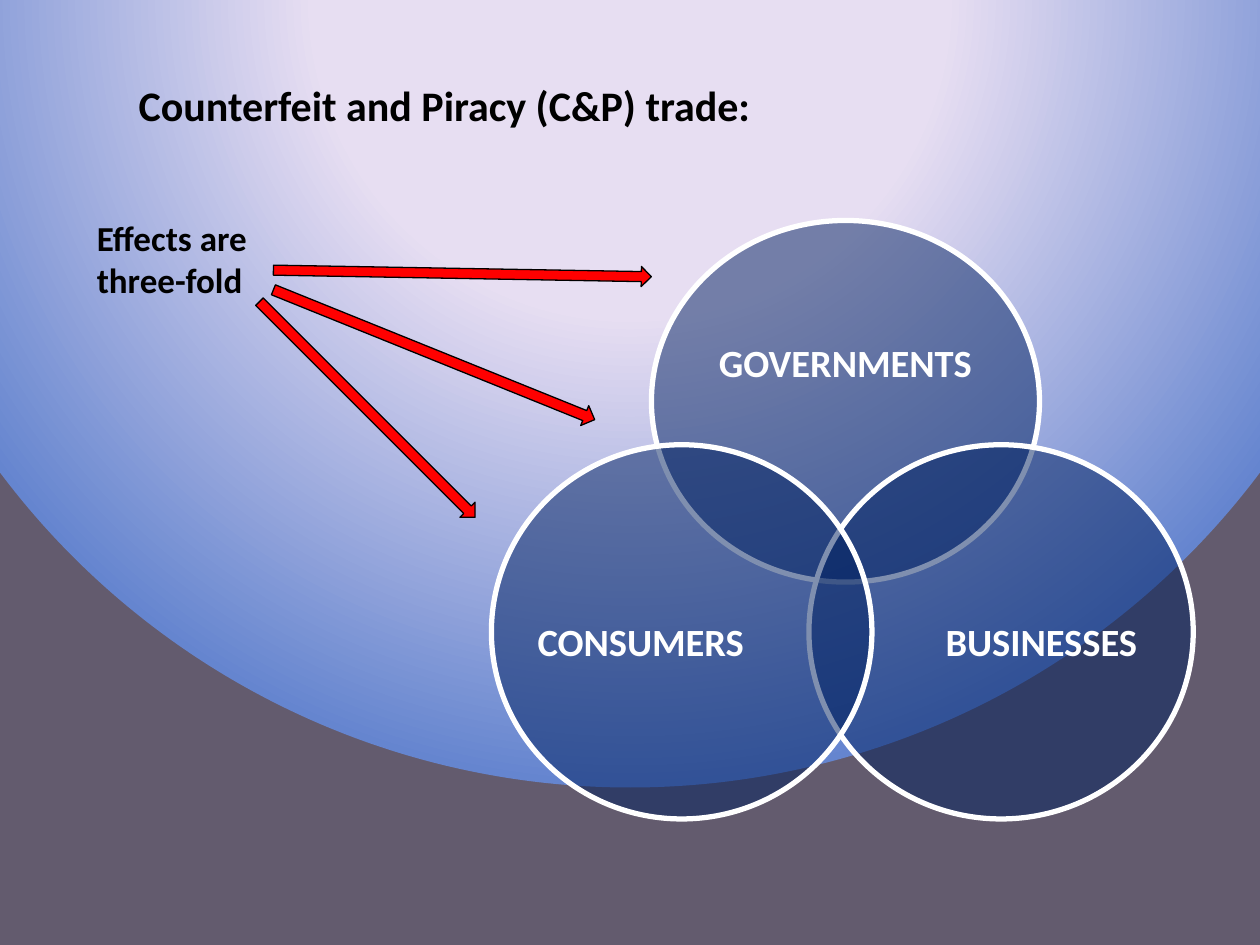
from pptx import Presentation, oxml, util as u
from pptx.dml.color import RGBColor
from pptx.enum import shapes, text
from pptx.oxml import ns

WHITE = RGBColor(0xFF, 0xFF, 0xFF)
BLACK = RGBColor(0, 0, 0)
NAVY = RGBColor(0, 0x20, 0x60)
RED = RGBColor(0xFF, 0, 0)
LILAC = RGBColor(0xE7, 0xDE, 0xF2)
BLUE = RGBColor(0x65, 0x85, 0xCF)
SLATE = RGBColor(0x63, 0x5B, 0x6E)

COLS, ROWS = 100, 75
CELL = u.Inches(0.1)
GLOW = ((40, LILAC), (100, BLUE), (100, SLATE))
RINGS = (
    ("GOVERNMENTS", (12.7, 0, 30.8, 28.7), (16.8, 5, 22.6, 12.9)),
    ("BUSINESSES", (25.2, 17.8, 30.5, 29.7), (34.5, 25.5, 18.3, 16.3)),
    ("CONSUMERS", (0, 17.8, 30.2, 29.7), (2.8, 25.5, 18.1, 16.3)),
)
ARROWS = (
    ((7.6, 0, 1.6, 30), 271),
    ((5.3, 7.7, 1.7, 27.5), 292),
    ((0, 13.7, 1.7, 24.2), 315),
)


def span(box, part=(0, 0, 0, 0)):
    """Turn a part's cells within a box into slide lengths."""
    left, top = box[0] + part[0], box[1] + part[1]
    wide, high = part[2:] if part[2] else box[2:]
    return [round(n * CELL) for n in (left, top, wide, high)]


def format(item, **values):
    """Set each named value on the item."""
    for name, value in values.items():
        setattr(item, name, value)


def write(shape, lines, size, color, frame, para):
    """Write bold lines with the given frame and paragraph formats."""
    body = shape.text_frame
    body.text = "\n".join(lines)
    format(body, **frame)
    for row in body.paragraphs:
        format(row, **para)
        format(row.runs[0].font, name="Calibri", size=u.Pt(size), bold=True)
        row.runs[0].font.color.rgb = color


def paint(shape, fill, line, width):
    """Give a shape a plain fill and outline."""
    shape.shadow.inherit = False
    shape.fill.solid()
    shape.fill.fore_color.rgb = fill
    shape.line.color.rgb = line
    shape.line.width = u.Pt(width)


def glow(slide):
    """Fill the background with a round gradient from above."""
    stops = "".join(
        f'<a:gs pos="{at * 1000}"><a:srgbClr val="{color}"/></a:gs>'
        for at, color in GLOW
    )
    slide.element.cSld.insert(0, oxml.parse_xml(
        f'<p:bg {ns.nsdecls("p", "a")}><p:bgPr><a:gradFill rotWithShape="1">'
        f'<a:gsLst>{stops}</a:gsLst><a:path path="circle">'
        '<a:fillToRect l="50000" t="-80000" r="50000" b="180000"/></a:path>'
        '</a:gradFill><a:effectLst/></p:bgPr></p:bg>'))


def head(slide, box):
    """Place the title."""
    title = slide.shapes.title
    format(title, **dict(zip(("left", "top", "width", "height"), span(box))))
    write(title, ["Counterfeit and Piracy (C&P) trade:"], 24, BLACK,
          dict(word_wrap=True, auto_size=text.MSO_AUTO_SIZE.NONE,
               vertical_anchor=text.MSO_ANCHOR.TOP),
          dict(alignment=text.PP_ALIGN.LEFT))


def venn(slide, box):
    """Place three overlapping rings with their labels."""
    group = slide.shapes.add_group_shape().shapes
    for name, ring, label in RINGS:
        oval = group.add_shape(shapes.MSO_SHAPE.OVAL, *span(box, ring))
        paint(oval, NAVY, WHITE, 3)
        tint = oval.element.spPr.find(ns.qn("a:solidFill"))[0]
        tint.append(oxml.parse_xml(
            f'<a:alpha {ns.nsdecls("a")} val="50000"/>'))
        write(group.add_textbox(*span(box, label)), [name], 22, WHITE,
              dict(word_wrap=True, vertical_anchor=text.MSO_ANCHOR.MIDDLE,
                   margin_left=0, margin_top=0,
                   margin_right=0, margin_bottom=0),
              dict(alignment=text.PP_ALIGN.CENTER, line_spacing=0.9,
                   space_after=u.Pt(7.7)))


def fan(slide, box):
    """Place the arrows that spread towards the rings."""
    group = slide.shapes.add_group_shape().shapes
    for part, turn in ARROWS:
        arrow = group.add_shape(shapes.MSO_SHAPE.DOWN_ARROW, *span(box, part))
        paint(arrow, RED, BLACK, 0.75)
        arrow.rotation = turn


def lead(slide, box):
    """Place the remark the arrows start from."""
    write(slide.shapes.add_textbox(*span(box)),
          ["Effects are", "three-fold"], 20, BLACK,
          dict(word_wrap=False, auto_size=text.MSO_AUTO_SIZE.SHAPE_TO_FIT_TEXT),
          dict(alignment=text.PP_ALIGN.LEFT))


def main():
    """Build the slide and save it."""
    deck = Presentation()
    format(deck, slide_width=COLS * CELL, slide_height=ROWS * CELL)
    slide = deck.slides.add_slide(deck.slide_layouts[5])
    glow(slide)
    venn(slide, (39, 17.5, 55.7, 47.5))
    head(slide, (10, 5.8, 56.7, 9.1))
    fan(slide, (28.3, 6.7, 9.2, 37.9))
    lead(slide, (6.7, 16.7, 14.8, 7.7))
    deck.save("out.pptx")


if __name__ == "__main__":
    main()
